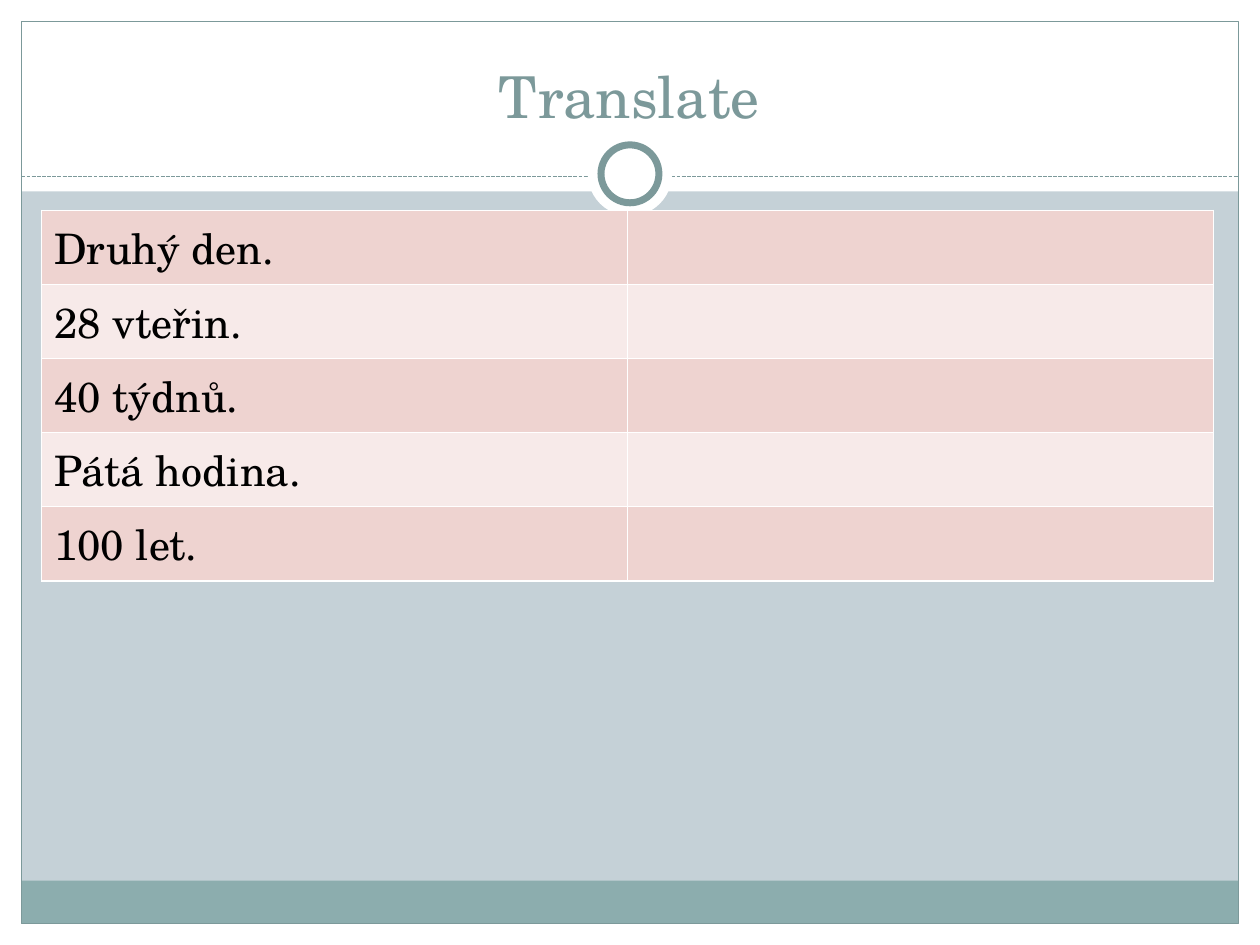
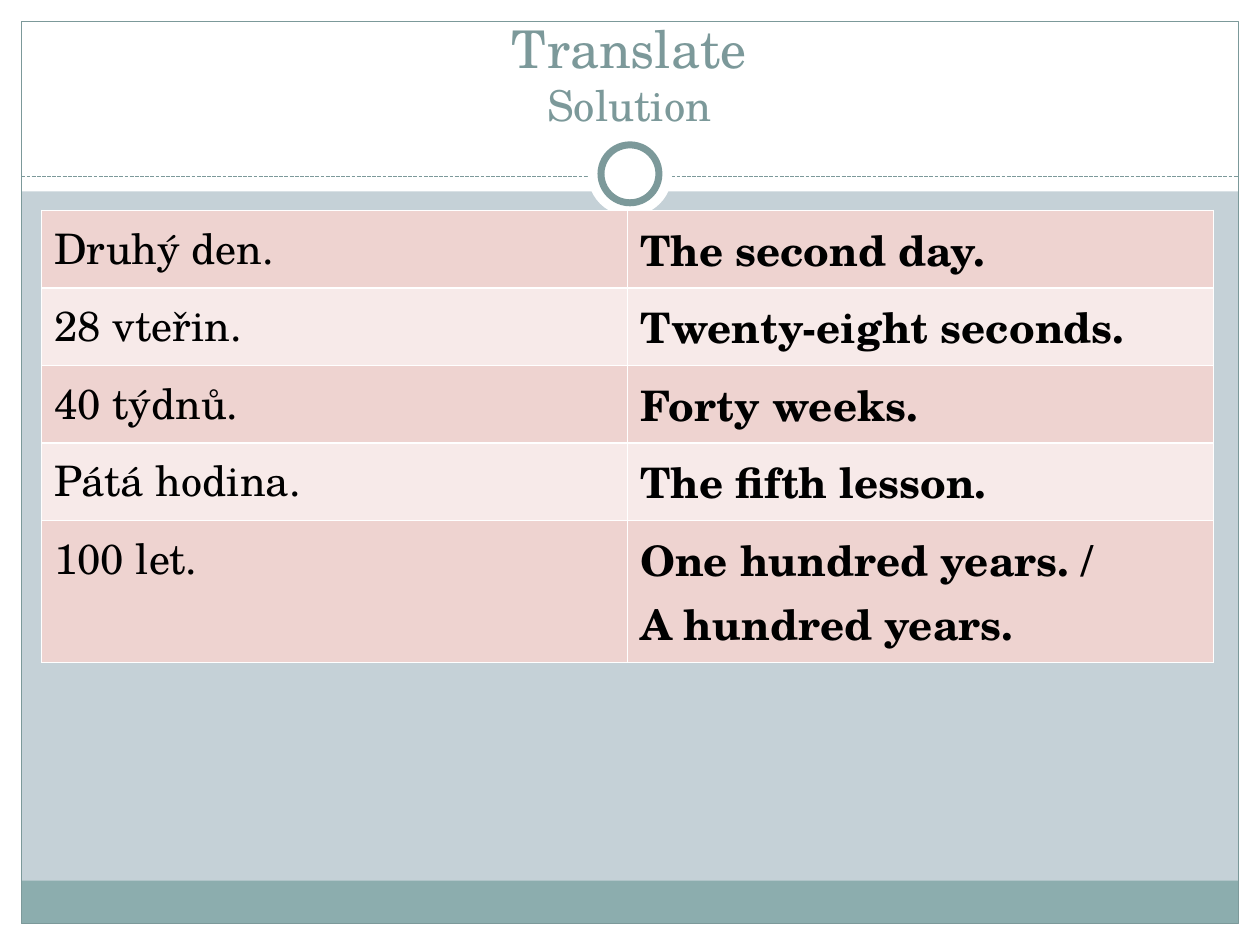
import dataclasses

import lxml.etree
import pptx
import pptx.dml.color
import pptx.enum.dml
import pptx.enum.shapes
import pptx.enum.text
import pptx.oxml.ns
import pptx.util

Inches = pptx.util.Inches
Pt = pptx.util.Pt
Shapes = pptx.enum.shapes.MSO_SHAPE


@dataclasses.dataclass(frozen=True)
class Theme:
    """Colours, font and type sizes shared by the slides."""
    background: str = "C5D1D7"
    white: str = "FFFFFF"
    accent: str = "7C999A"
    footer: str = "8CADAE"
    text: str = "000000"
    bands: tuple = ("EED3D0", "F7EAE9")
    font: str = "TeX Gyre Schola"
    title_size: float = 33
    short_title_size: float = 29.7
    subtitle_size: float = 24.3
    cell_size: float = 24
    thin_line: float = 0.75
    ring_line: float = 4
    border_line: float = 1


THEME = Theme()
SLIDE_BOX = (0, 0, 10, 7.5)
TITLE_BOX = (0.33, 0.25, 9.33, 0.83)
PHRASES = ["Druhý den.", "28 vteřin.", "40 týdnů.", "Pátá hodina.", "100 let."]
TRANSLATIONS = [
    "The second day.",
    "Twenty-eight seconds.",
    "Forty weeks.",
    "The fifth lesson.",
    "One hundred years. /\nA hundred years.",
]


def rgb(value):
    """Return a colour object for a hex value."""
    return pptx.dml.color.RGBColor.from_string(value)


def add_panel(slide, kind, box, fill=None, line=None, width=THEME.thin_line):
    """Add a preset shape with an optional fill and outline."""
    shape = slide.shapes.add_shape(kind, *map(Inches, box))
    shape.shadow.inherit = False
    if fill:
        shape.fill.solid()
        shape.fill.fore_color.rgb = rgb(fill)
    else:
        shape.fill.background()
    if line:
        shape.line.color.rgb = rgb(line)
        shape.line.width = Pt(width)
    else:
        shape.line.fill.background()


def add_divider(slide, left, right, y):
    """Add the dashed line below the title."""
    divider = slide.shapes.add_connector(
        pptx.enum.shapes.MSO_CONNECTOR.STRAIGHT,
        Inches(left), Inches(y), Inches(right), Inches(y))
    divider.line.color.rgb = rgb(THEME.accent)
    divider.line.width = Pt(THEME.thin_line)
    divider.line.dash_style = pptx.enum.dml.MSO_LINE.SQUARE_DOT
    lxml.etree.SubElement(divider._element.spPr, pptx.oxml.ns.qn("a:effectLst"))


def add_frame(slide, box):
    """Draw the margins, footer band, outline and title ring."""
    left, top, width, height = box
    margin, header, footer = 0.17, 1.52, 0.34
    right, bottom = left + width, top + height
    inner_width = width - 2 * margin
    for margin_box in (
        (left, bottom - margin, width, margin),
        (left, top, width, header),
        (left, top, margin, height),
        (right - margin, top, margin, height),
    ):
        add_panel(slide, Shapes.RECTANGLE, margin_box, THEME.white)
    add_panel(slide, Shapes.RECTANGLE,
              (left + margin, bottom - margin - footer, inner_width, footer), THEME.footer)
    add_panel(slide, Shapes.RECTANGLE,
              (left + margin, top + margin, inner_width, height - 2 * margin),
              line=THEME.accent)
    add_divider(slide, left + margin, right - margin, top + 1.4)
    center_x, center_y = left + width / 2, top + 1.38
    for diameter, line in ((0.67, None), (0.46, THEME.accent)):
        ring_box = (center_x - diameter / 2, center_y - diameter / 2, diameter, diameter)
        add_panel(slide, Shapes.OVAL, ring_box, THEME.white, line, THEME.ring_line)


def add_title(slide, box, lines):
    """Write centred title lines, given as text and size pairs."""
    frame = slide.shapes.add_textbox(*map(Inches, box)).text_frame
    frame.word_wrap = True
    frame.vertical_anchor = pptx.enum.text.MSO_ANCHOR.BOTTOM
    paragraph = frame.paragraphs[0]
    paragraph.alignment = pptx.enum.text.PP_ALIGN.CENTER
    paragraph.font.name = THEME.font
    paragraph.font.color.rgb = rgb(THEME.accent)
    for index, (text, size) in enumerate(lines):
        if index:
            paragraph.add_line_break()
        run = paragraph.add_run()
        run.text = text
        run.font.size = Pt(size)


def add_borders(cell):
    """Put a white line on every side of a cell."""
    properties = cell._tc.get_or_add_tcPr()
    for index, side in enumerate(("a:lnL", "a:lnR", "a:lnT", "a:lnB")):
        line = lxml.etree.Element(pptx.oxml.ns.qn(side), w=str(Pt(THEME.border_line)))
        fill = lxml.etree.SubElement(line, pptx.oxml.ns.qn("a:solidFill"))
        lxml.etree.SubElement(fill, pptx.oxml.ns.qn("a:srgbClr"), val=THEME.white)
        properties.insert(index, line)


def fill_cell(cell, text, color, bold):
    """Fill, border and write one table cell."""
    cell.fill.solid()
    cell.fill.fore_color.rgb = rgb(color)
    add_borders(cell)
    cell.text = text
    for paragraph in cell.text_frame.paragraphs:
        paragraph.font.name = THEME.font
        paragraph.font.size = Pt(THEME.cell_size)
        paragraph.font.bold = bold
        paragraph.font.color.rgb = rgb(THEME.text)


def add_phrase_table(slide, box, translations, last_height):
    """List the phrases beside their translations in banded rows."""
    table = slide.shapes.add_table(len(PHRASES), 2, *map(Inches, box)).table
    table.first_row = table.horz_banding = False
    row_height = (box[3] - last_height) / (len(PHRASES) - 1)
    for index, texts in enumerate(zip(PHRASES, translations)):
        is_last = index == len(PHRASES) - 1
        table.rows[index].height = Inches(last_height if is_last else row_height)
        color = THEME.bands[index % len(THEME.bands)]
        for column, text in enumerate(texts):
            fill_cell(table.cell(index, column), text, color, bold=column == 1)


def add_translation_slide(presentation, title_lines, translations, table_height, last_height):
    """Build one exercise slide from its title and translations."""
    slide = presentation.slides.add_slide(presentation.slide_layouts[6])
    slide.background.fill.solid()
    slide.background.fill.fore_color.rgb = rgb(THEME.background)
    add_frame(slide, SLIDE_BOX)
    add_title(slide, TITLE_BOX, title_lines)
    add_phrase_table(slide, (0.33, 1.67, 9.3, table_height), translations, last_height)


def main():
    """Build the exercise and its solution."""
    presentation = pptx.Presentation()
    presentation.slide_width = Inches(SLIDE_BOX[2])
    presentation.slide_height = Inches(SLIDE_BOX[3])
    add_translation_slide(
        presentation, [("Translate", THEME.title_size)],
        [""] * len(PHRASES), table_height=2.94, last_height=0.59)
    add_translation_slide(
        presentation,
        [("Translate", THEME.short_title_size), ("Solution", THEME.subtitle_size)],
        TRANSLATIONS, table_height=3.59, last_height=1.13)
    presentation.save("out.pptx")


if __name__ == "__main__":
    main()
